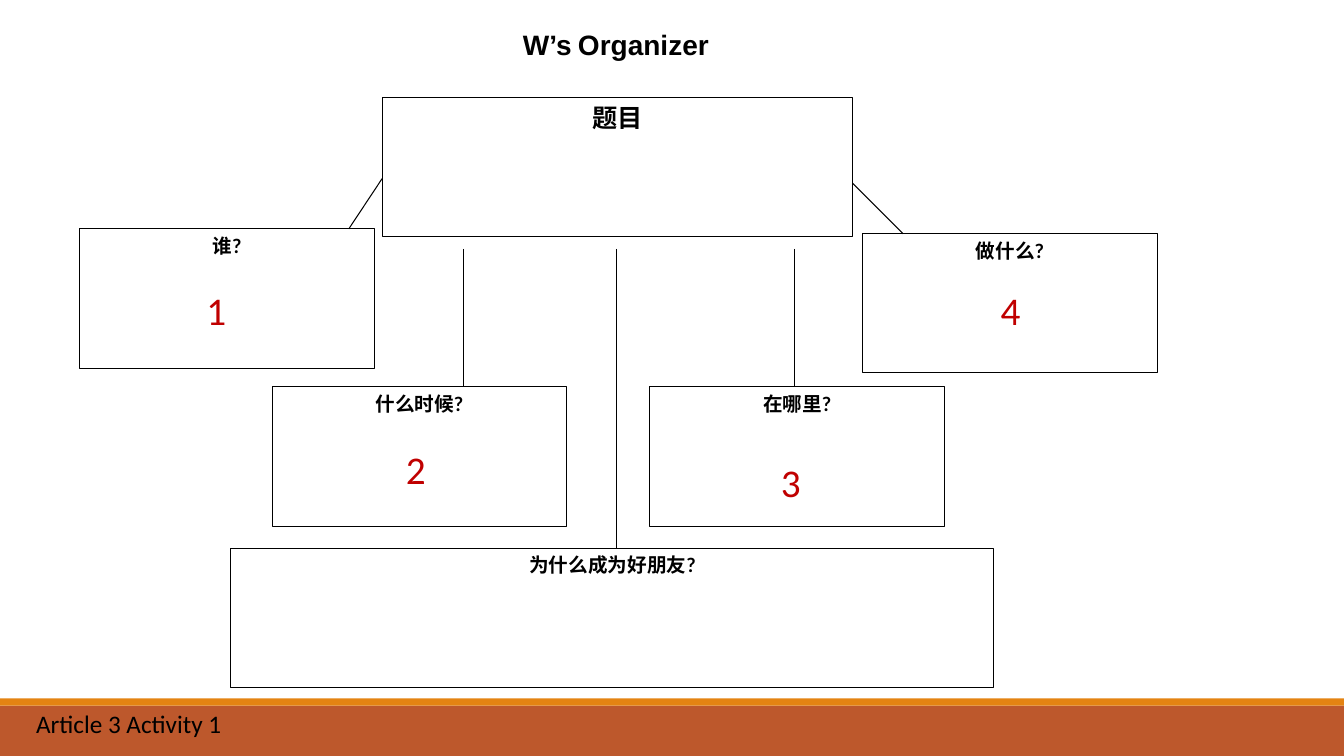
from dataclasses import dataclass

from lxml.etree import SubElement
from pptx import Presentation
from pptx.dml.color import RGBColor
from pptx.enum.shapes import MSO_CONNECTOR, MSO_SHAPE
from pptx.enum.text import MSO_ANCHOR, MSO_AUTO_SIZE, PP_ALIGN
from pptx.oxml.ns import qn
from pptx.slide import Slide
from pptx.text.text import Font, TextFrame
from pptx.util import Cm, Pt


@dataclass(frozen=True)
class Theme:
    ink: str = "000000"
    paper: str = "FFFFFF"
    red: str = "C00000"
    rust: str = "BD582C"
    orange: str = "E48312"
    head: int = 20
    gap: int = 16
    topic: int = 18
    ask: int = 14
    digit: int = 28
    foot: int = 18
    rule: float = 0.75


@dataclass(frozen=True)
class Box:
    text: str
    left: float
    top: float
    width: float
    size: int


@dataclass(frozen=True)
class Line:
    x1: float
    y1: float
    x2: float
    y2: float


@dataclass(frozen=True)
class Label:
    text: str
    left: float
    top: float


THEME = Theme()
WIDE, TALL = 33.87, 19.05
BOX_H, SMALL_W = 3.51, 7.42
LOW, STEM = 9.75, 6.27

BOXES = [
    Box("题目", 9.63, 2.46, 11.86, THEME.topic),
    Box("谁?", 2.01, 5.77, SMALL_W, THEME.ask),
    Box("在哪里?", 16.38, LOW, SMALL_W, THEME.ask),
    Box("做什么?", 21.74, 5.89, SMALL_W, THEME.ask),
    Box("什么时候?", 6.86, LOW, SMALL_W, THEME.ask),
    Box("为什么成为好朋友?", 5.82, 13.82, 19.23, THEME.ask),
]
LINES = [
    Line(11.68, STEM, 11.68, LOW),
    Line(15.54, STEM, 15.54, 13.82),
    Line(9.63, 4.5, 8.79, 5.77),
    Line(20.02, STEM, 20.02, LOW),
    Line(21.49, 4.62, 22.76, 5.89),
]
DIGITS = [
    Label("1", 4.95, 7.09),
    Label("2", 9.98, 11.1),
    Label("3", 19.43, 11.43),
    Label("4", 24.97, 7.09),
]


def rgb(code: str) -> RGBColor:
    return RGBColor.from_string(code)


def style(font: Font, name: str, size: int, color: str, bold: bool = False) -> None:
    font.name = name
    font.size = Pt(size)
    font.bold = bold
    font.color.rgb = rgb(color)


def add_rect(slide: Slide, left: float, top: float, width: float, height: float,
             fill: str, edge: str | None = None) -> TextFrame:
    rect = slide.shapes.add_shape(MSO_SHAPE.RECTANGLE, Cm(left), Cm(top), Cm(width), Cm(height))
    rect.shadow.inherit = False
    rect.fill.solid()
    rect.fill.fore_color.rgb = rgb(fill)
    if edge:
        rect.line.color.rgb = rgb(edge)
        rect.line.width = Pt(THEME.rule)
    else:
        rect.line.fill.background()
    return rect.text_frame


def add_box(slide: Slide, box: Box) -> None:
    frame = add_rect(slide, box.left, box.top, box.width, BOX_H, THEME.paper, THEME.ink)
    frame.vertical_anchor = MSO_ANCHOR.TOP
    para = frame.paragraphs[0]
    para.text = box.text
    para.alignment = PP_ALIGN.CENTER
    style(para.font, "Lato", box.size, THEME.ink, True)


def add_line(slide: Slide, line: Line) -> None:
    link = slide.shapes.add_connector(
        MSO_CONNECTOR.STRAIGHT, Cm(line.x1), Cm(line.y1), Cm(line.x2), Cm(line.y2))
    link.line.color.rgb = rgb(THEME.ink)
    link.line.width = Pt(THEME.rule)
    SubElement(link.element.spPr, qn("a:effectLst"))


def add_text(slide: Slide, left: float, top: float, width: float, height: float,
             wrap: bool) -> TextFrame:
    frame = slide.shapes.add_textbox(Cm(left), Cm(top), Cm(width), Cm(height)).text_frame
    frame.word_wrap = wrap
    return frame


def add_label(slide: Slide, label: Label, width: float, height: float,
              size: int, color: str, wrap: bool) -> None:
    frame = add_text(slide, label.left, label.top, width, height, wrap)
    frame.auto_size = MSO_AUTO_SIZE.SHAPE_TO_FIT_TEXT
    para = frame.paragraphs[0]
    para.text = label.text
    style(para.font, "Calibri", size, color)


def add_title(slide: Slide) -> None:
    para = add_text(slide, 12.93, 0.58, 5.23, 1.88, False).paragraphs[0]
    style(para.font, "Arial", THEME.head, THEME.ink, True)
    for text, size in (("W’s", THEME.head), (" ", THEME.gap), ("Organizer", THEME.head)):
        run = para.add_run()
        run.text = text
        run.font.size = Pt(size)


def main() -> None:
    deck = Presentation()
    deck.slide_width, deck.slide_height = Cm(WIDE), Cm(TALL)
    slide = deck.slides.add_slide(deck.slide_layouts[6])

    add_rect(slide, 0, 17.78, WIDE, 1.27, THEME.rust)
    add_rect(slide, 0, 17.6, WIDE, 0.18, THEME.orange)
    for box in BOXES:
        add_box(slide, box)
    for line in LINES:
        add_line(slide, line)
    add_title(slide)
    foot = Label("Article 3 Activity 1", 0.66, 17.73)
    add_label(slide, foot, 5.23, 1.02, THEME.foot, THEME.ink, False)
    for digit in DIGITS:
        add_label(slide, digit, 2.44, 1.45, THEME.digit, THEME.red, True)
    deck.save("out.pptx")


if __name__ == "__main__":
    main()
